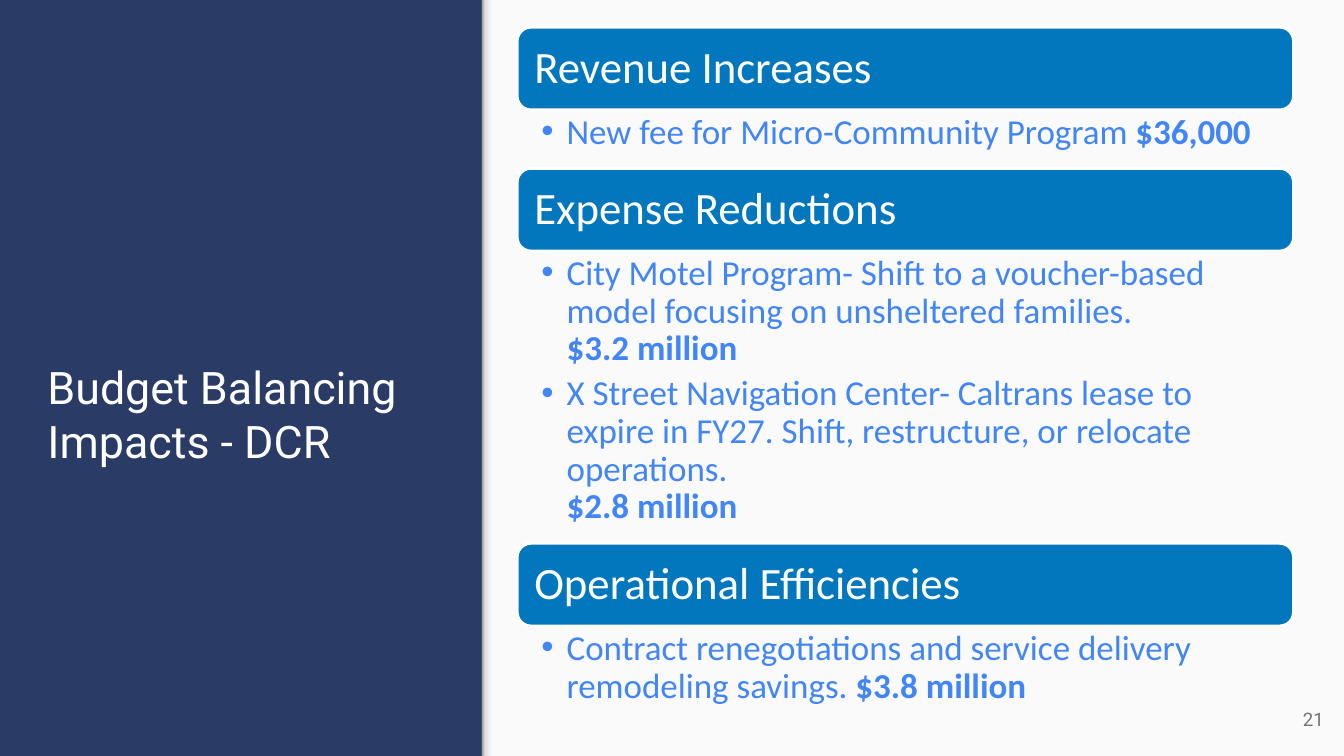
import copy

import pptx
import pptx.util
import pptx.dml.color
import pptx.enum.shapes
import pptx.enum.text
from lxml import etree

PX = 9144  # EMU, 100 px to the inch
SHAPE = pptx.enum.shapes.MSO_SHAPE
ANCHOR = pptx.enum.text.MSO_ANCHOR
ALIGN = pptx.enum.text.PP_ALIGN

NAVY, PALE, BLUE, SKY, WHITE, GREY = (
    "2A3B66", "FAFAFA", "0277BD", "4285F4", "FFFFFF", "737373")

LEFT, WIDTH, BAR = 513, 770, 82
# heading, top, height of list, items as (plain, bold)
GROUPS = [
    ("Revenue Increases", 27, 58, [
        ("New fee for Micro-Community Program ", "$36,000")]),
    ("Expense Reductions", 167, 290, [
        ("City Motel Program- Shift to a voucher-based model focusing on "
         "unsheltered families. \n", "$3.2 million"),
        ("X Street Navigation Center- Caltrans lease to expire in FY27. "
         "Shift, restructure, or relocate operations. \n", "$2.8 million")]),
    ("Operational Efficiencies", 539, 87, [
        ("Contract renegotiations and service delivery remodeling savings. ",
         "$3.8 million")]),
]


def rgb(code):
    return pptx.dml.color.RGBColor.from_string(code)


def place(shape, x, y, w, h):
    shape.left, shape.top, shape.width, shape.height = (
        v * PX for v in (x, y, w, h))


def block(slide, kind, box, color):
    shape = slide.shapes.add_shape(kind, *(v * PX for v in box))
    shape.shadow.inherit = False
    shape.fill.solid()
    shape.fill.fore_color.rgb = rgb(color)
    shape.line.fill.background()
    return shape


def bullet(para):
    props = para._p.get_or_add_pPr()
    props.set("marL", str(25 * PX))
    props.set("indent", str(-25 * PX))
    tag = "{http://schemas.openxmlformats.org/drawingml/2006/main}"
    etree.SubElement(props, tag + "buFont", typeface="Arial")
    etree.SubElement(props, tag + "buChar", char="•")


def write(shape, items, size, color, font="Calibri", align=ALIGN.LEFT,
          anchor=ANCHOR.MIDDLE, inset=(10, 10, 10, 10), space=1.0,
          after=0, dots=False):
    """Fill shape with one paragraph for each (plain, bold) item."""
    frame = shape.text_frame
    frame.word_wrap = True
    frame.auto_size = pptx.enum.text.MSO_AUTO_SIZE.NONE
    frame.vertical_anchor = anchor
    (frame.margin_left, frame.margin_top,
     frame.margin_right, frame.margin_bottom) = (v * PX for v in inset)
    for i, parts in enumerate(items):
        para = frame.add_paragraph() if i else frame.paragraphs[0]
        if dots:
            bullet(para)
        para.alignment = align
        para.line_spacing = space
        para.space_before = pptx.util.Pt(0)
        para.space_after = pptx.util.Pt(after)
        for bold, text in enumerate(parts):
            run = para.add_run()
            run.text = text.rstrip("\n")
            run.font.name = font
            run.font.size = pptx.util.Pt(size)
            run.font.bold = bool(bold)
            run.font.color.rgb = rgb(color)
            if text.endswith("\n"):
                para.add_line_break()


def shade(slide):
    """Draw the soft shadow along the left edge of the pale panel."""
    edge = block(slide, SHAPE.RECTANGLE, (478, 0, 16, 750), PALE)
    edge.fill.gradient()
    edge.fill.gradient_angle = 0
    first = edge.fill.gradient_stops[0]._gs
    first.addnext(copy.deepcopy(first))
    tones = [(0, "999999"), (0.2, "DEDEDE"), (0.64, "F9F9F9")]
    for stop, (pos, tone) in zip(edge.fill.gradient_stops, tones):
        stop.position = pos
        stop.color.rgb = rgb(tone)


def group(slide, body, head, top, high, items):
    bar = block(slide, SHAPE.ROUNDED_RECTANGLE, (LEFT, top, WIDTH, BAR), BLUE)
    bar.line.color.rgb = rgb(WHITE)
    bar.line.width = pptx.util.Pt(2)
    write(bar, [(head,)], 32, WHITE, inset=(13, 13, 13, 13), space=0.9)
    place(body, LEFT, top + BAR, WIDTH, high)
    write(body, items, 25, SKY, anchor=ANCHOR.TOP, inset=(24, 4, 25, 4),
          space=0.9, after=5, dots=True)
    bar._element.addnext(body._element)


def main():
    deck = pptx.Presentation()
    deck.slide_width, deck.slide_height = 1333 * PX, 750 * PX
    slide = deck.slides.add_slide(deck.slide_layouts.get_by_name("Comparison"))
    slide.background.fill.solid()
    slide.background.fill.fore_color.rgb = rgb(NAVY)
    title, *bodies = slide.placeholders
    spare = bodies.pop()
    spare._element.getparent().remove(spare._element)

    block(slide, SHAPE.RECTANGLE, (478, 0, 855, 750), PALE)
    shade(slide)
    place(title, 37, 284, 409, 190)
    write(title, [("Budget Balancing Impacts - DCR",)], 32, WHITE,
          font="Roboto", anchor=ANCHOR.BOTTOM)
    for body, data in zip(bodies, GROUPS):
        group(slide, body, *data)
    number = slide.shapes.add_textbox(0, 0, 0, 0)
    place(number, 1243, 685, 80, 57)
    write(number, [("21",)], 13.3, GREY, font="Roboto", align=ALIGN.RIGHT)
    deck.save("out.pptx")


if __name__ == "__main__":
    main()
